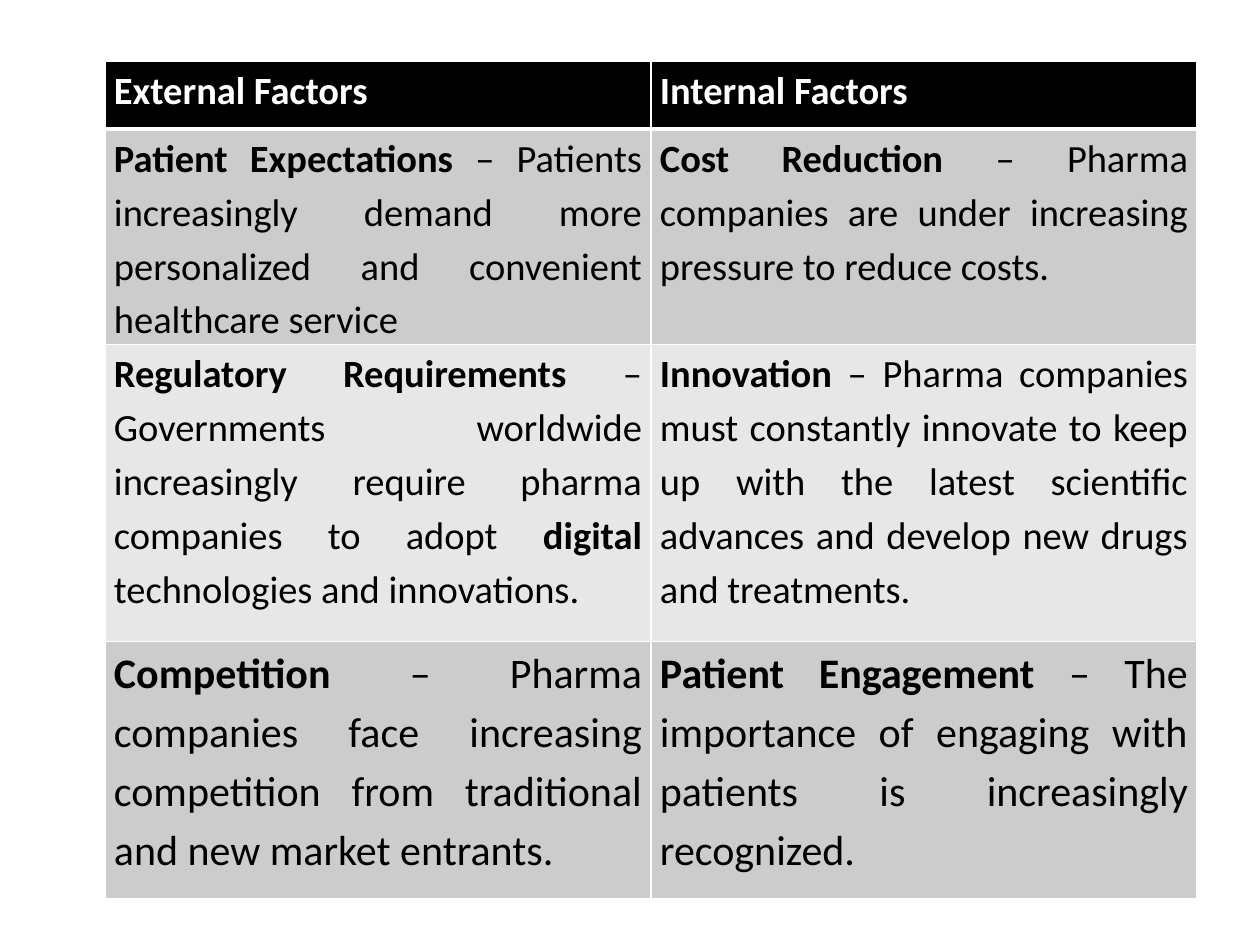
from lxml.etree import SubElement
from pptx import Presentation
from pptx.dml.color import RGBColor
from pptx.enum.text import PP_ALIGN
from pptx.oxml.ns import qn
from pptx.util import Emu, Pt

SCALE = 914400 / 126
WHITE = "FFFFFF"
BLACK = "000000"
GREY = "CCCCCC"
PALE = "E7E7E7"
SIDES = ("L", "R", "T", "B")

# Runs in each cell alternate: bold, regular, bold, regular.
ROWS = [
    (68, 22, BLACK, WHITE, [["External Factors"], ["Internal Factors"]]),
    (210, 22, GREY, BLACK, [
        ["Patient Expectations", " – Patients increasingly demand more "
         "personalized and convenient healthcare service"],
        ["Cost Reduction", " – Pharma companies are under increasing "
         "pressure to reduce costs."],
    ]),
    (297, 22, PALE, BLACK, [
        ["Regulatory Requirements", " – Governments worldwide increasingly "
         "require pharma companies to adopt ", "digital",
         " technologies and innovations."],
        ["Innovation", " – Pharma companies must constantly innovate to keep "
         "up with the latest scientific advances and develop new drugs and "
         "treatments."],
    ]),
    (257, 24, GREY, BLACK, [
        ["Competition", " – Pharma companies face increasing competition "
         "from traditional and new market entrants."],
        ["Patient Engagement", " – The importance of engaging with patients "
         "is increasingly recognized."],
    ]),
]


def px(n):
    return Emu(round(n * SCALE))


def color(code):
    return RGBColor.from_string(code)


def add_text(cell, runs, size, ink):
    para = cell.text_frame.paragraphs[0]
    para.alignment = PP_ALIGN.JUSTIFY
    para.line_spacing = 1.15
    for i, text in enumerate(runs):
        run = para.add_run()
        run.text = text
        font = run.font
        font.name = "Calibri"
        font.size = Pt(size)
        font.bold = i % 2 == 0
        font.color.rgb = color(ink)


def add_edges(cell, widths):
    props = cell._tc.get_or_add_tcPr()
    for side, width in zip(SIDES, widths):
        line = SubElement(props, qn(f"a:ln{side}"), w=str(Pt(width)))
        fill = SubElement(line, qn("a:solidFill"))
        SubElement(fill, qn("a:srgbClr"), val=WHITE)


def fill_cell(cell, runs, size, back, ink, widths):
    cell.margin_left = cell.margin_right = px(9)
    cell.margin_top = cell.margin_bottom = 0
    add_edges(cell, widths)
    cell.fill.solid()
    cell.fill.fore_color.rgb = color(back)
    add_text(cell, runs, size, ink)


def add_grid(slide, left, top, width):
    height = sum(row[0] for row in ROWS)
    frame = slide.shapes.add_table(
        len(ROWS), 2, px(left), px(top), px(width), px(height))
    table = frame.table
    for r, (tall, size, back, ink, cells) in enumerate(ROWS):
        table.rows[r].height = px(tall)
        widths = (1, 1, 3 if r == 1 else 1, 3 if r == 0 else 1)
        for c, runs in enumerate(cells):
            fill_cell(table.cell(r, c), runs, size, back, ink, widths)


def main():
    deck = Presentation()
    deck.slide_width = px(1260)
    deck.slide_height = px(945)
    slide = deck.slides.add_slide(deck.slide_layouts[6])
    add_grid(slide, 105, 61, 1092)
    deck.save("out.pptx")


if __name__ == "__main__":
    main()
